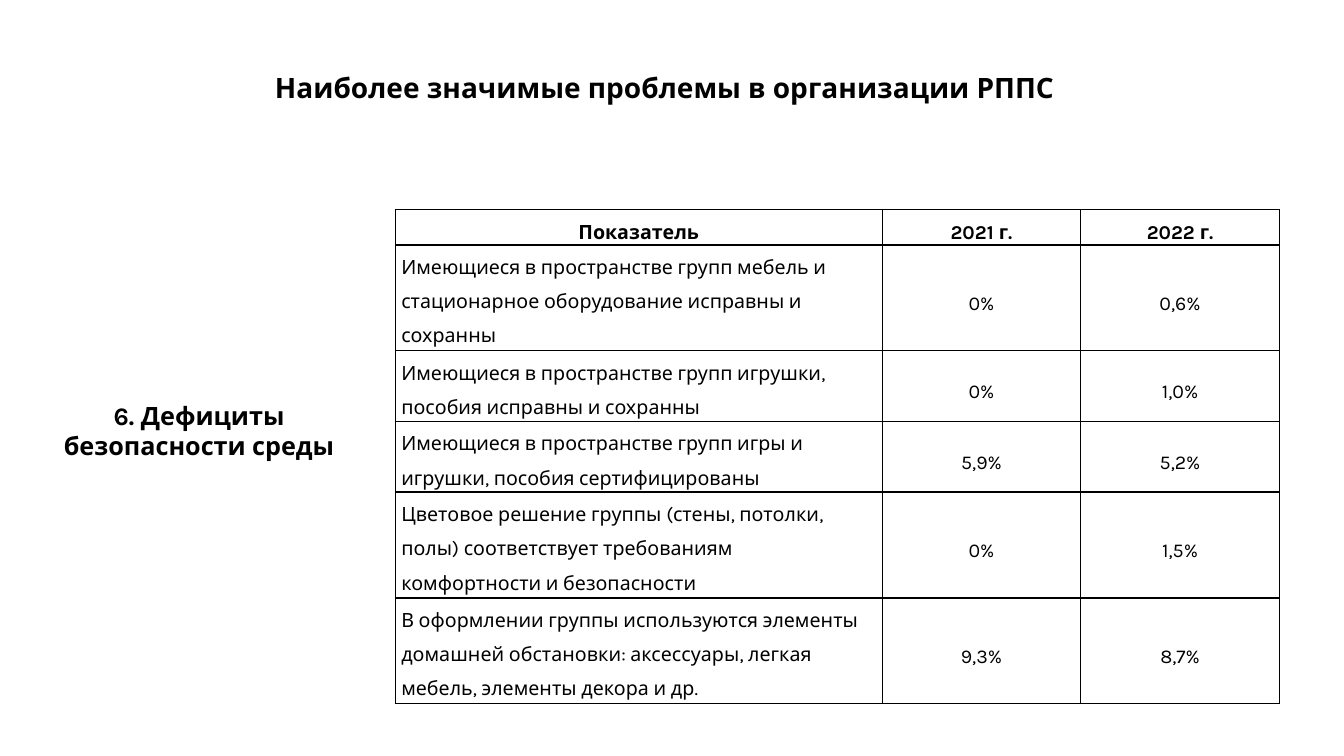
from dataclasses import dataclass

import lxml.etree
import pptx
import pptx.dml.color
import pptx.enum.text
import pptx.oxml.ns
import pptx.slide
import pptx.table
import pptx.text.text
import pptx.util

Inches = pptx.util.Inches
Pt = pptx.util.Pt
ALIGN = pptx.enum.text.PP_ALIGN
ANCHOR = pptx.enum.text.MSO_ANCHOR
AUTO_SIZE = pptx.enum.text.MSO_AUTO_SIZE

BLACK = pptx.dml.color.RGBColor(0x00, 0x00, 0x00)
WHITE = pptx.dml.color.RGBColor(0xFF, 0xFF, 0xFF)
FONT = "Karla"
TITLE_ONLY = 5


@dataclass(frozen=True)
class Indicator:
    name: str
    share_2021: str
    share_2022: str
    height: float


HEADER = Indicator("Показатель", "2021 г.", "2022 г.", 0.35)
INDICATORS = [
    Indicator("Имеющиеся в пространстве групп мебель и стационарное оборудование "
              "исправны и сохранны", "0%", "0,6%", 1.05),
    Indicator("Имеющиеся в пространстве групп игрушки, пособия исправны и сохранны",
              "0%", "1,0%", 0.7),
    Indicator("Имеющиеся в пространстве групп игры и игрушки, пособия сертифицированы",
              "5,9%", "5,2%", 0.7),
    Indicator("Цветовое решение группы (стены, потолки, полы) соответствует "
              "требованиям комфортности и безопасности", "0%", "1,5%", 1.05),
    Indicator("В оформлении группы используются элементы домашней обстановки: "
              "аксессуары, легкая мебель, элементы декора и др.", "9,3%", "8,7%", 1.05),
]
COLUMN_WIDTHS = [4.83, 1.97, 1.97]


def apply(target: object, values: dict[str, object]) -> None:
    for name, value in values.items():
        setattr(target, name, value)


def write(para: pptx.text.text._Paragraph, text: str, size: int, bold: bool,
          align: ALIGN = ALIGN.CENTER) -> None:
    para.alignment = align
    span = para.add_run()
    span.text = text
    apply(span.font, {"name": FONT, "size": Pt(size), "bold": bold})
    span.font.color.rgb = BLACK


def add_borders(cell: pptx.table._Cell) -> None:
    properties = cell._tc.get_or_add_tcPr()
    qn = pptx.oxml.ns.qn
    for side in ("lnL", "lnR", "lnT", "lnB"):
        line = lxml.etree.SubElement(properties, qn(f"a:{side}"), w=str(Pt(1)))
        fill = lxml.etree.SubElement(line, qn("a:solidFill"))
        lxml.etree.SubElement(fill, qn("a:srgbClr"), val=str(BLACK))


def fill_cell(cell: pptx.table._Cell, text: str, is_header: bool, is_name: bool) -> None:
    left_aligned = is_name and not is_header
    margin = Inches(0.07 if is_header else 0.06)
    add_borders(cell)
    cell.fill.background()
    apply(cell, {
        "margin_left": margin, "margin_right": margin,
        "margin_top": 0, "margin_bottom": 0,
        "vertical_anchor": ANCHOR.TOP if left_aligned else ANCHOR.MIDDLE,
    })
    para = cell.text_frame.paragraphs[0]
    apply(para, {"line_spacing": 1.5, "space_before": Pt(6)})
    write(para, text, 14, is_header, ALIGN.LEFT if left_aligned else ALIGN.CENTER)


def add_title(page: pptx.slide.Slide) -> None:
    title = page.shapes.title
    apply(title, {"left": Inches(1.42), "top": Inches(0.65),
                  "width": Inches(10.34), "height": Inches(0.44)})
    apply(title.text_frame, {"word_wrap": True, "auto_size": AUTO_SIZE.SHAPE_TO_FIT_TEXT,
                             "vertical_anchor": ANCHOR.TOP})
    write(title.text_frame.paragraphs[0],
          "Наиболее значимые проблемы в организации РППС", 20, True)


def add_indicator_table(page: pptx.slide.Slide) -> None:
    rows = [HEADER, *INDICATORS]
    frame = page.shapes.add_table(
        len(rows), len(COLUMN_WIDTHS), Inches(3.92), Inches(2.08),
        Inches(sum(COLUMN_WIDTHS)), Inches(sum(row.height for row in rows)))
    table = frame.table
    apply(table, {"first_row": False, "horz_banding": False})
    for column, width in zip(table.columns, COLUMN_WIDTHS):
        column.width = Inches(width)
    for row_index, row in enumerate(rows):
        table.rows[row_index].height = Inches(row.height)
        for column_index, text in enumerate((row.name, row.share_2021, row.share_2022)):
            fill_cell(table.cell(row_index, column_index), text,
                      is_header=row is HEADER, is_name=column_index == 0)


def add_section_label(page: pptx.slide.Slide) -> None:
    box = page.shapes.add_textbox(Inches(0.53), Inches(3.92), Inches(2.89), Inches(0.71))
    apply(box.text_frame, {"word_wrap": False, "auto_size": AUTO_SIZE.SHAPE_TO_FIT_TEXT})
    write(box.text_frame.paragraphs[0], "6. Дефициты", 18, True)
    write(box.text_frame.add_paragraph(), "безопасности среды", 18, True)


def main() -> None:
    # Deck and page
    deck = pptx.Presentation()
    apply(deck, {"slide_width": Inches(13.33), "slide_height": Inches(7.5)})
    page = deck.slides.add_slide(deck.slide_layouts[TITLE_ONLY])
    page.background.fill.solid()
    page.background.fill.fore_color.rgb = WHITE

    # Content
    add_title(page)
    add_indicator_table(page)
    add_section_label(page)

    deck.save("out.pptx")


if __name__ == "__main__":
    main()
